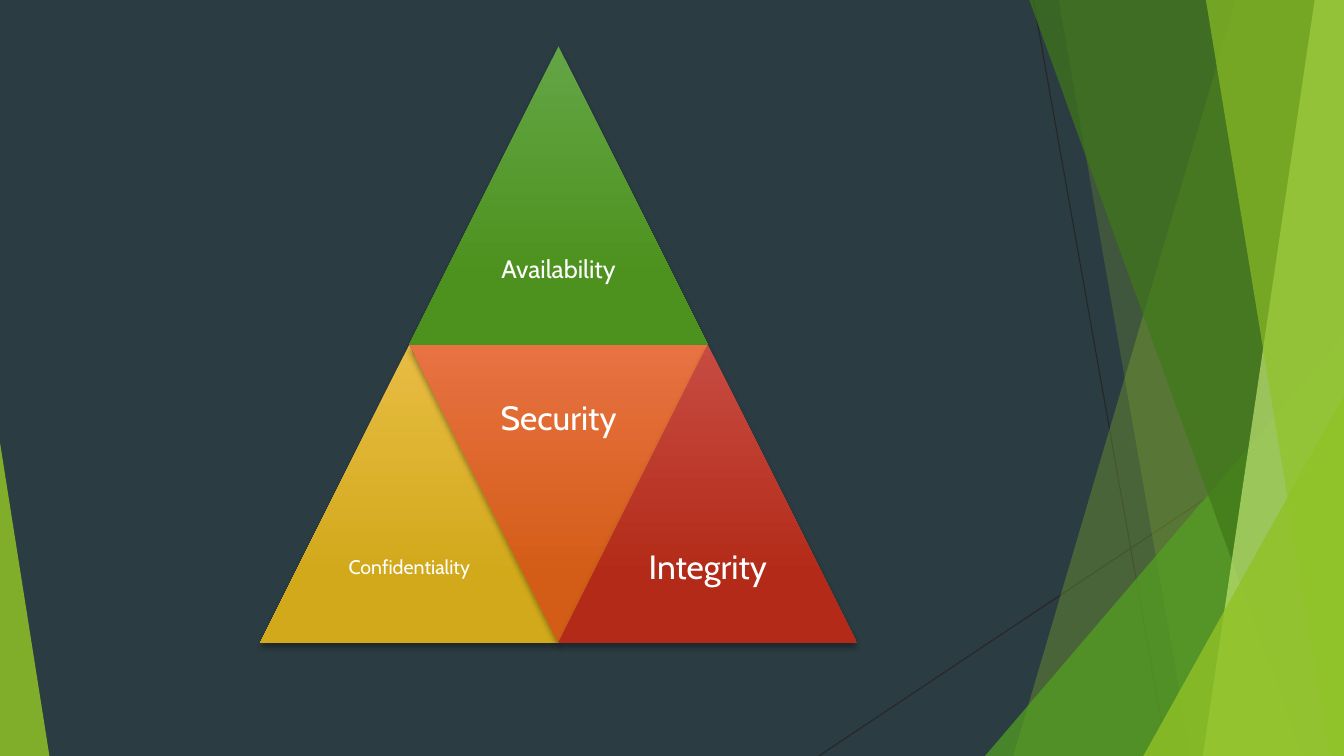
from lxml.etree import SubElement as sub_element
from pptx import Presentation
from pptx.dml.color import RGBColor
from pptx.enum.shapes import MSO_CONNECTOR as Connector, MSO_SHAPE as Shape
from pptx.enum.text import MSO_ANCHOR as Anchor, PP_ALIGN as Align
from pptx.oxml.ns import qn
from pptx.util import Inches, Pt

WIDTH, HEIGHT = 13.33, 7.5


def colour(value):
    return RGBColor.from_string(value)


def add_xml(parent, tag, **attributes):
    return sub_element(parent, qn(tag), {name: str(v) for name, v in attributes.items()})


def apply_format(target, values):
    for name, value in values.items():
        setattr(target, name, value)


class TriangleSlide:
    font = "Cabin"
    text_colour = "FFFFFF"
    line_colour = "262626"
    left, top, cell = 2.58, 0.46, 1.48  # pyramid grid, four cells each way

    def __init__(self, deck, background):
        self.page = deck.slides.add_slide(deck.slide_layouts[6])
        self.shapes = self.page.shapes
        fill = self.page.background.fill
        fill.solid()
        fill.fore_color.rgb = colour(background)

    def share(self, x, y):
        """Turn percentages of the slide into a point."""
        return Inches(WIDTH * x / 100), Inches(HEIGHT * y / 100)

    def grid(self, column, row, span):
        """Square area of the pyramid grid."""
        size = Inches(span * self.cell)
        return (Inches(self.left + column * self.cell),
                Inches(self.top + row * self.cell), size, size)

    def hairline(self, start, end):
        line = self.shapes.add_connector(
            Connector.STRAIGHT, *self.share(*start), *self.share(*end))
        line.line.color.rgb = colour(self.line_colour)
        line.line.width = Pt(0.75)
        add_xml(line._element.spPr, "a:effectLst")

    def facet(self, start, foot, side, fill, opacity):
        """Area between a slanted edge and a side of the slide."""
        points = [self.share(*point) for point in
                  (start, (foot, 100), (side, 100), (side, start[1]))]
        builder = self.shapes.build_freeform(*points[0])
        builder.add_line_segments(points[1:], close=True)
        shape = builder.convert_to_shape()
        shape.shadow.inherit = False
        shape.line.fill.background()
        shape.fill.solid()
        shape.fill.fore_color.rgb = colour(fill)
        tint = shape._element.spPr.find(".//" + qn("a:srgbClr"))
        add_xml(tint, "a:alpha", val=opacity * 1000)

    def triangle(self, column, row, light, dark, rotation):
        shape = self.shapes.add_shape(Shape.ISOSCELES_TRIANGLE, *self.grid(column, row, 2))
        shape.rotation = rotation
        shape.shadow.inherit = False
        shape.line.fill.background()
        shape.fill.gradient()
        shape.fill.gradient_angle = 270
        for stop, value, position in zip(shape.fill.gradient_stops, (light, dark), (0, 0.78)):
            stop.color.rgb = colour(value)
            stop.position = position
        properties = shape._element.spPr
        properties.find(qn("a:gradFill")).set("rotWithShape", "0")
        # Soft shadow below
        shadow = add_xml(properties.find(qn("a:effectLst")), "a:outerShdw", blurRad=Pt(4),
                         dist=Pt(3), dir=90 * 60000, rotWithShape=0)
        black = add_xml(shadow, "a:srgbClr", val="000000")
        add_xml(black, "a:alpha", val=35000)

    def label(self, column, row, text, size, inset):
        box = self.shapes.add_textbox(*self.grid(column, row, 1))
        margins = {f"margin_{side}": Inches(inset) for side in ("left", "right", "top", "bottom")}
        apply_format(box.text_frame, {
            "word_wrap": True, "vertical_anchor": Anchor.MIDDLE, **margins})
        para = box.text_frame.paragraphs[0]
        apply_format(para, {"alignment": Align.CENTER, "line_spacing": 0.9})
        span = para.add_run()
        span.text = text
        apply_format(span.font, {"name": self.font, "size": Pt(size)})
        span.font.color.rgb = colour(self.text_colour)


# Lines: start and end in percent of the slide
HAIRLINES = [((76.89, 0), (86.87, 100)), ((60.92, 100), (100, 53.73))]

# Facets: start of the slanted edge, its foot, side of the slide, fill, opacity
FACETS = [
    ((91.97, 0), 75.39, 100, "90C226", 30),
    ((78.77, 0), 88.6, 100, "90C226", 20),
    ((100, 44.4), 73.29, 100, "54A021", 72),
    ((76.59, 0), 96.92, 100, "3F7819", 70),
    ((97.82, 0), 89.5, 100, "C0E474", 70),
    ((89.72, 0), 98.95, 100, "90C226", 65),
    ((100, 52.4), 85.07, 100, "90C226", 80),
    ((0, 58.53), 3.68, 0, "90C226", 85),
]

# Pyramid: column, row, gradient, rotation, text, size, inset
PYRAMID = [
    (1, 0, "63A545", "4D921E", 0, "Availability", 18, 0.07),
    (0, 2, "E7BC43", "D2A91B", 0, "Confidentiality", 14, 0.06),
    (1, 2, "E87242", "D35D16", 180, "Security", 24, 0.1),
    (2, 2, "C74B42", "B32B18", 0, "Integrity", 24, 0.1),
]


def main():
    deck = Presentation()
    deck.slide_width, deck.slide_height = Inches(WIDTH), Inches(HEIGHT)
    slide = TriangleSlide(deck, "2C3C43")

    # Background decoration
    for start, end in HAIRLINES:
        slide.hairline(start, end)
    for facet in FACETS:
        slide.facet(*facet)

    # Pyramid: labels sit in the wide half of each triangle
    for column, row, light, dark, rotation, text, size, inset in PYRAMID:
        slide.triangle(column, row, light, dark, rotation)
        slide.label(column + 0.5, row if rotation else row + 1, text, size, inset)

    deck.save("out.pptx")


if __name__ == "__main__":
    main()
